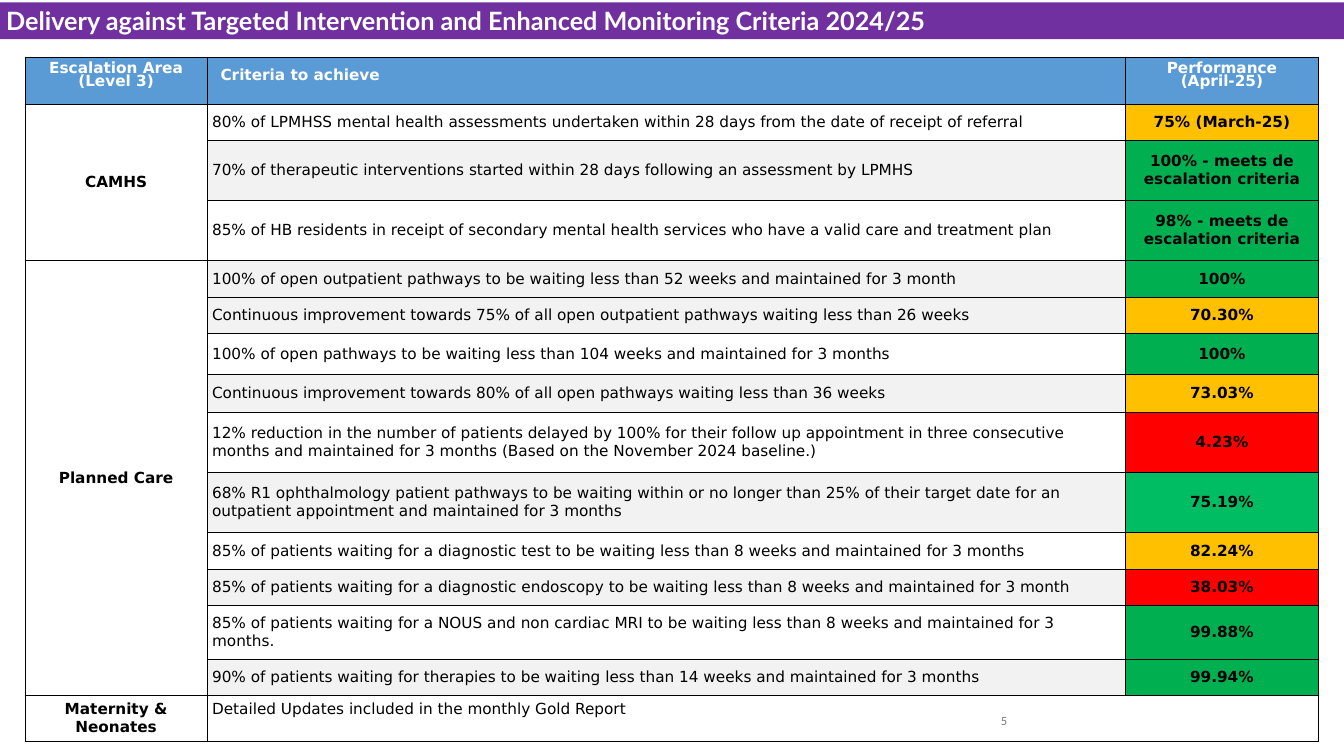
import pptx
import pptx.util
import pptx.dml.color
import pptx.enum.text
import pptx.oxml

Pt = pptx.util.Pt
ALIGN = pptx.enum.text.PP_ALIGN
ANCHOR = pptx.enum.text.MSO_ANCHOR

COLOURS = {
    "purple": "7030A0", "header": "5B9BD5", "white": "FFFFFF", "black": "000000",
    "stripe": "F2F2F2", "amber": "FFC000", "green": "00B050", "mint": "00BC62",
    "red": "FF0000", "grey": "797979",
}
WIDTH, HEIGHT = 1583.3, 890.6
BODY_FONT = "DejaVu Sans"
COLUMN_WIDTHS = [214.5, 1081.5, 228]
HEADER_HEIGHT, CLOSING_HEIGHT = 55.4, 54
SINGLE, DOUBLE = 43.2, 70.6

HEADINGS = ["Escalation Area\n(Level 3)", "Criteria to achieve", "Performance\n(April-25)"]

# Escalation area: criterion, its fill, performance, its rating, row height
AREAS = {
    "CAMHS": [
        ("80% of LPMHSS mental health assessments undertaken within 28 days from the date "
         "of receipt of referral", "white", "75% (March-25)", "amber", SINGLE),
        ("70% of therapeutic interventions started within 28 days following an assessment "
         "by LPMHS", "stripe", "100% - meets de escalation criteria", "green", DOUBLE),
        ("85% of HB residents in receipt of secondary mental health services who have a "
         "valid care and treatment plan", "white",
         "98% - meets de escalation criteria", "green", DOUBLE),
    ],
    "Planned Care": [
        ("100% of open outpatient pathways to be waiting less than 52 weeks and maintained "
         "for 3 month", "stripe", "100%", "green", SINGLE),
        ("Continuous improvement towards 75% of all open outpatient pathways waiting less "
         "than 26 weeks", "stripe", "70.30%", "amber", SINGLE),
        ("100% of open pathways to be waiting less than 104 weeks and maintained for 3 "
         "months", "white", "100%", "green", 47.5),
        ("Continuous improvement towards 80% of all open pathways waiting less than 36 "
         "weeks", "stripe", "73.03%", "amber", 45.4),
        ("12% reduction in the number of patients delayed by 100% for their follow up "
         "appointment in three consecutive months and maintained for 3 months (Based on "
         "the November 2024 baseline.)", "white", "4.23%", "red", DOUBLE),
        ("68% R1 ophthalmology patient pathways to be waiting within or no longer than 25% "
         "of their target date for an outpatient appointment and maintained for 3 months",
         "stripe", "75.19%", "mint", DOUBLE),
        ("85% of patients waiting for a diagnostic test to be waiting less than 8 weeks and "
         "maintained for 3 months", "white", "82.24%", "amber", SINGLE),
        ("85% of patients waiting for a diagnostic endoscopy to be waiting less than 8 weeks "
         "and maintained for 3 month", "stripe", "38.03%", "red", SINGLE),
        ("85% of patients waiting for a NOUS and non cardiac MRI to be waiting less than 8 "
         "weeks and maintained for 3 months.", "white", "99.88%", "green", 62.6),
        ("90% of patients waiting for therapies to be waiting less than 14 weeks and "
         "maintained for 3 months", "stripe", "99.94%", "green", SINGLE),
    ],
}


def colour(name):
    return pptx.dml.color.RGBColor.from_string(COLOURS[name])


def write_text(frame, text, *, size=18, font=BODY_FONT, ink="black", bold=False,
               align=ALIGN.LEFT, line=None, gap=0):
    """Write one paragraph per line of text, with gap points between them."""
    for index, words in enumerate(text.split("\n")):
        para = frame.add_paragraph() if index else frame.paragraphs[0]
        para.alignment = align
        if line:
            para.line_spacing = Pt(line)
        if index:
            para.space_before = Pt(gap)
        span = para.add_run()
        span.text = words
        span.font.size, span.font.name, span.font.bold = Pt(size), font, bold
        span.font.color.rgb = colour(ink)


def style_cell(cell, fill, *, inset=(5.8, 5.8), anchor=ANCHOR.MIDDLE):
    """Give a cell black borders, a fill, side and top insets and an anchor."""
    properties = cell._tc.get_or_add_tcPr()
    for side in ("lnL", "lnR", "lnT", "lnB"):
        properties.append(pptx.oxml.parse_xml(
            f'<a:{side} xmlns:a="http://schemas.openxmlformats.org/drawingml/2006/main" '
            f'w="{Pt(1)}"><a:solidFill><a:srgbClr val="{COLOURS["black"]}"/>'
            f'</a:solidFill></a:{side}>'))
    cell.fill.solid()
    cell.fill.fore_color.rgb = colour(fill)
    cell.margin_left = cell.margin_right = Pt(inset[0])
    cell.margin_top = cell.margin_bottom = Pt(inset[1])
    cell.vertical_anchor = anchor


def add_title_bar(page, left, top, width, height):
    bar = page.shapes.title
    bar.left, bar.top, bar.width, bar.height = map(Pt, (left, top, width, height))
    bar.fill.solid()
    bar.fill.fore_color.rgb = colour("purple")
    frame = bar.text_frame
    frame.auto_size = pptx.enum.text.MSO_AUTO_SIZE.NONE
    frame.vertical_anchor = ANCHOR.MIDDLE
    write_text(frame, "Delivery against Targeted Intervention and Enhanced Monitoring "
               "Criteria 2024/25", size=29.7, font="Lato", ink="white", bold=True)


def add_criteria_table(page, left, top, width, height):
    records = [record for area in AREAS.values() for record in area]
    heights = [HEADER_HEIGHT, *(record[-1] for record in records), CLOSING_HEIGHT]
    table = page.shapes.add_table(len(heights), len(COLUMN_WIDTHS),
                                  *map(Pt, (left, top, width, height))).table
    table.first_row = table.horz_banding = False
    for column, size in zip(table.columns, COLUMN_WIDTHS):
        column.width = Pt(size)
    for row, size in zip(table.rows, heights):
        row.height = Pt(size)

    # Header row
    for index, heading in enumerate(HEADINGS):
        cell = table.cell(0, index)
        style_cell(cell, "header", inset=(15.8, 7.9))
        write_text(cell.text_frame, heading, ink="white", bold=True, line=8, gap=8,
                   align=ALIGN.LEFT if index == 1 else ALIGN.CENTER)

    # Escalation areas, each one merged down its criteria
    row = 1
    for area, criteria in AREAS.items():
        first = row
        for criterion, shade, performance, rating, _ in criteria:
            for index, fill in enumerate(("white", shade, rating)):
                style_cell(table.cell(row, index), fill)
            write_text(table.cell(row, 1).text_frame, criterion)
            write_text(table.cell(row, 2).text_frame, performance, bold=True,
                       align=ALIGN.CENTER)
            row += 1
        table.cell(first, 0).merge(table.cell(row - 1, 0))
        write_text(table.cell(first, 0).text_frame, area, bold=True, align=ALIGN.CENTER)

    # Closing row
    for index in range(len(COLUMN_WIDTHS)):
        style_cell(table.cell(row, index), "white",
                   anchor=ANCHOR.TOP if index else ANCHOR.MIDDLE)
    table.cell(row, 1).merge(table.cell(row, 2))
    write_text(table.cell(row, 0).text_frame, "Maternity & Neonates", bold=True,
               align=ALIGN.CENTER)
    write_text(table.cell(row, 1).text_frame,
               "Detailed Updates included in the monthly Gold Report")


def add_page_number(page, left, top, width, height):
    box = page.shapes.add_textbox(*map(Pt, (left, top, width, height)))
    frame = box.text_frame
    frame.word_wrap = True
    frame.vertical_anchor = ANCHOR.MIDDLE
    frame.margin_left = frame.margin_right = Pt(11.5)
    write_text(frame, "5", size=14.8, font="Calibri", ink="grey", align=ALIGN.RIGHT)


def main():
    deck = pptx.Presentation()
    deck.slide_width, deck.slide_height = Pt(WIDTH), Pt(HEIGHT)
    page = deck.slides.add_slide(deck.slide_layouts[5])
    add_title_bar(page, 0, 2.9, WIDTH, 43.2)
    add_criteria_table(page, 29.5, 67, sum(COLUMN_WIDTHS), 806.4)
    add_page_number(page, 908.6, 825.1, 289.4, 47.5)
    deck.save("out.pptx")


if __name__ == "__main__":
    main()
